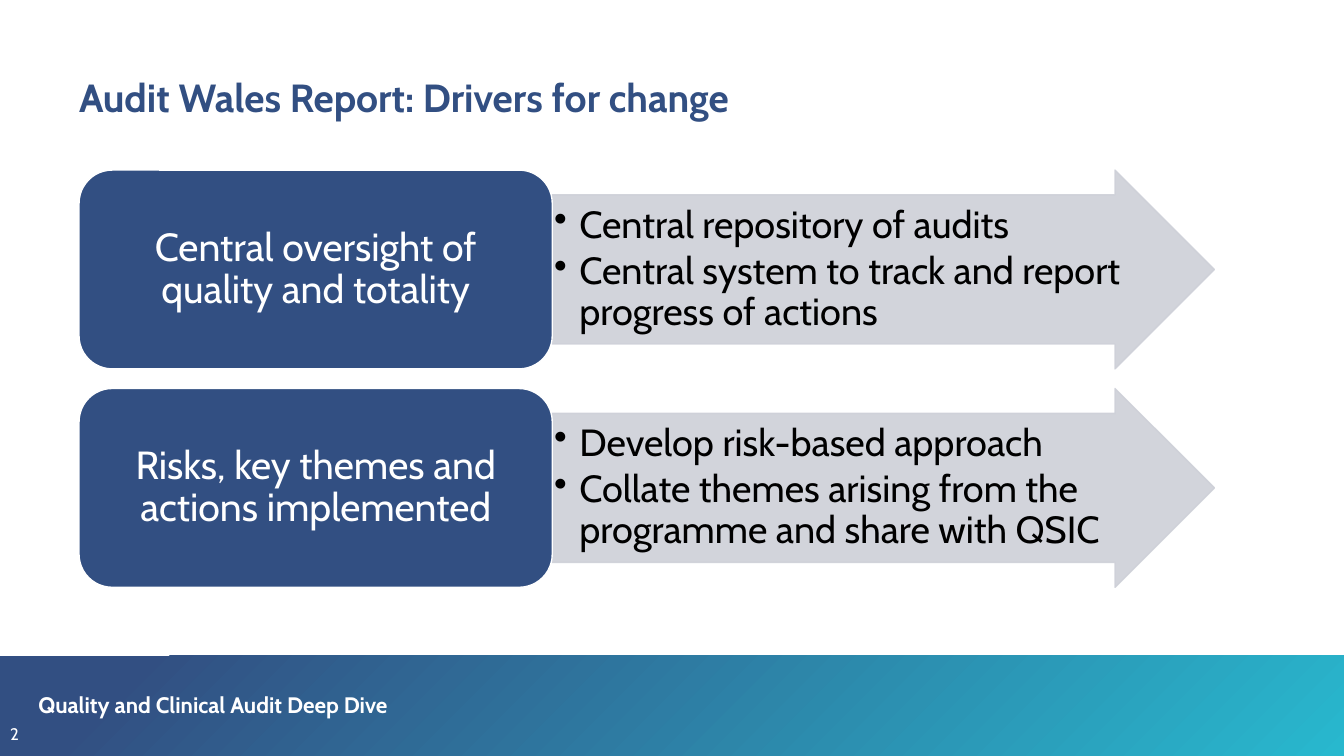
from lxml import etree
from pptx import Presentation
from pptx.dml.color import RGBColor
from pptx.enum.shapes import MSO_SHAPE as Shape
from pptx.enum.text import MSO_ANCHOR as Anchor, PP_ALIGN as Align
from pptx.oxml.ns import qn
from pptx.util import Pt

COLOURS = {
    "navy": "324F82",
    "teal": "28B8CE",
    "grey": "CED0D8",
    "white": "FFFFFF",
    "black": "000000",
}
FONT = "Cabin"
DRIVERS = [
    ("Central oversight of quality and totality",
     ["Central repository of audits",
      "Central system to track and report progress of actions"]),
    ("Risks, key themes and actions implemented",
     ["Develop risk-based approach",
      "Collate themes arising from the programme and share with QSIC"]),
]
ROW_TOP, ROW_PITCH, ROW_HEIGHT = 121.5, 156, 142
CARD_LEFT, CARD_WIDTH, ARROW_WIDTH = 56.5, 338, 473


def colour(name):
    return RGBColor.from_string(COLOURS[name])


def set_insets(frame, across, down):
    frame.margin_left = frame.margin_right = Pt(across)
    frame.margin_top = frame.margin_bottom = Pt(down)


def style_text(frame, size, ink, bold=False):
    for para in frame.paragraphs:
        para.line_spacing = 0.9
        for span in para.runs:
            span.font.name = FONT
            span.font.size = Pt(size)
            span.font.bold = bold
            span.font.color.rgb = colour(ink)


def add_bullet(para):
    props = para._p.get_or_add_pPr()
    props.set("marL", str(Pt(18)))
    props.set("indent", str(Pt(-18)))
    etree.SubElement(props, qn("a:buChar")).set("char", "•")


def set_opacity(colour_format, percent):
    for node in colour_format._xPr.iter(qn("a:srgbClr")):
        etree.SubElement(node, qn("a:alpha")).set("val", str(percent * 1000))


def add_block(page, kind, left, top, width, height):
    block = page.shapes.add_shape(kind, Pt(left), Pt(top), Pt(width), Pt(height))
    block.shadow.inherit = False
    return block


def add_label(page, text, left, top, width, height, size, ink, bold=True):
    box = page.shapes.add_textbox(Pt(left), Pt(top), Pt(width), Pt(height))
    frame = box.text_frame
    frame.word_wrap = True
    set_insets(frame, 0, 0)
    frame.text = text
    style_text(frame, size, ink, bold)


def add_footer_band(page):
    band = add_block(page, Shape.RECTANGLE, 0, 468.5, 960, 71.5)
    band.line.fill.background()
    band.fill.gradient()
    band.fill.gradient_angle = 315
    for stop, position, name in zip(band.fill.gradient_stops, (0.1, 1), ("navy", "teal")):
        stop.position = position
        stop.color.rgb = colour(name)


def add_arrow(page, top, points):
    arrow = add_block(page, Shape.RIGHT_ARROW, CARD_LEFT + CARD_WIDTH, top, ARROW_WIDTH, ROW_HEIGHT)
    arrow.adjustments[0] = 0.75
    arrow.adjustments[1] = 0.5
    arrow.fill.solid()
    arrow.fill.fore_color.rgb = colour("grey")
    arrow.line.color.rgb = colour("grey")
    arrow.line.width = Pt(1)
    for node in arrow._element.spPr.iter(qn("a:srgbClr")):
        etree.SubElement(node, qn("a:alpha")).set("val", "90000")
    frame = arrow.text_frame
    frame.word_wrap = True
    frame.vertical_anchor = Anchor.MIDDLE
    set_insets(frame, 1.35, 1.35)
    frame.text = "\n".join(points)
    for para in frame.paragraphs:
        add_bullet(para)
        para.alignment = Align.LEFT
        para.space_after = Pt(4)
    style_text(frame, 27, "black")


def add_card(page, top, text):
    card = add_block(page, Shape.ROUNDED_RECTANGLE, CARD_LEFT, top, CARD_WIDTH, ROW_HEIGHT)
    card.fill.solid()
    card.fill.fore_color.rgb = colour("navy")
    card.line.color.rgb = colour("white")
    card.line.width = Pt(1)
    frame = card.text_frame
    frame.word_wrap = True
    frame.vertical_anchor = Anchor.MIDDLE
    set_insets(frame, 8.4, 4.2)
    frame.text = text
    frame.paragraphs[0].alignment = Align.CENTER
    style_text(frame, 28, "white")


def main():
    deck = Presentation()
    deck.slide_width, deck.slide_height = Pt(960), Pt(540)
    page = deck.slides.add_slide(deck.slide_layouts[6])
    add_footer_band(page)
    add_label(page, "Audit Wales Report: Drivers for change", 56.5, 56, 847.5, 31, 28, "navy")
    for row, (driver, points) in enumerate(DRIVERS):
        top = ROW_TOP + row * ROW_PITCH
        add_arrow(page, top, points)
        add_card(page, top, driver)
    add_label(page, "Quality and Clinical Audit Deep Dive", 27.5, 495.5, 283, 17.5, 16, "white")
    add_label(page, "2", 7.2, 518.5, 9, 14.5, 12, "white", bold=False)
    deck.save("out.pptx")


if __name__ == "__main__":
    main()
